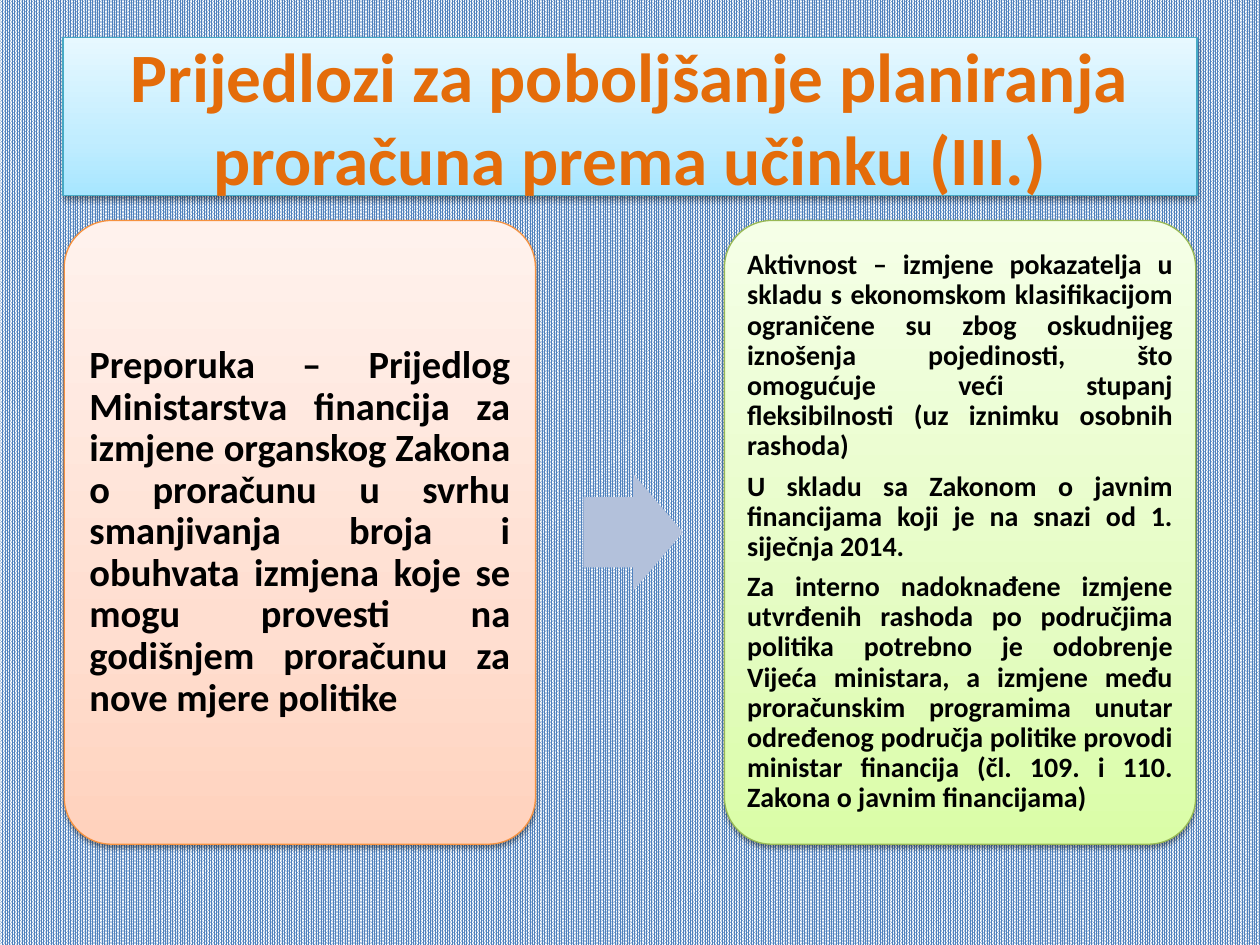
from copy import deepcopy

from lxml.etree import SubElement
from pptx import Presentation
from pptx.dml.color import RGBColor
from pptx.enum.dml import MSO_PATTERN
from pptx.enum.shapes import MSO_SHAPE
from pptx.enum.text import MSO_ANCHOR, PP_ALIGN
from pptx.oxml.ns import qn
from pptx.util import Inches, Pt

THEME = {
    "font": "Calibri",
    "pattern": ("4F81BD", "FFFFFF"),
    "title": {"stops": ("A7E6FF", "C1EDFF", "E7F8FF"), "line": "46AAC5"},
    "orange": {"stops": ("FFD2BD", "FFDED0", "FFF2ED"), "line": "F69240"},
    "green": {"stops": ("DAFDA7", "E4FCC2", "F5FFE7"), "line": "98B955"},
    "arrow": "B3C1DB",
    "heading": "E46C0A",
    "body": "000000",
    "shadow": "000000",
    "heading_size": 39.6,
    "left_size": 22,
    "right_size": 16,
}


def add_panel(page, kind, left, top, width, height, style):
    panel = page.shapes.add_shape(kind, Inches(left), Inches(top), Inches(width), Inches(height))
    panel.fill.gradient()
    panel.fill.gradient_angle = 90
    stops = panel.fill.gradient_stops
    first = stops[0]._gs
    first.addnext(deepcopy(first))
    for stop, position, color in zip(panel.fill.gradient_stops, (0, 0.35, 1), style["stops"]):
        stop.position = position
        stop.color.rgb = RGBColor.from_string(color)
    panel.line.color.rgb = RGBColor.from_string(style["line"])
    panel.line.width = Pt(0.75)
    panel.shadow.inherit = False
    effects = panel._element.spPr.find(qn("a:effectLst"))
    shadow = SubElement(effects, qn("a:outerShdw"), blurRad=str(Pt(3.1)), dist=str(Pt(1.6)),
                        dir="5400000", rotWithShape="0")
    shade = SubElement(shadow, qn("a:srgbClr"), val=THEME["shadow"])
    SubElement(shade, qn("a:alpha"), val="38000")
    return panel


def write(frame, text, size, color, align, inset=None, line_spacing=None, gap=0):
    frame.word_wrap = True
    frame.vertical_anchor = MSO_ANCHOR.MIDDLE
    if inset is not None:
        frame.margin_left = frame.margin_right = Inches(inset)
        frame.margin_top = frame.margin_bottom = Inches(inset)
    for index, line in enumerate(text.split("\n")):
        para = frame.add_paragraph() if index else frame.paragraphs[0]
        para.alignment = align
        para.line_spacing = line_spacing
        para.space_after = Pt(gap * size)
        span = para.add_run()
        span.text = line
        span.font.name = THEME["font"]
        span.font.size = Pt(size)
        span.font.bold = True
        span.font.color.rgb = RGBColor.from_string(color)


deck = Presentation()
deck.slide_width, deck.slide_height = Inches(10), Inches(7.5)
page = deck.slides.add_slide(deck.slide_layouts[6])

backdrop = page.background.fill
backdrop.patterned()
backdrop.pattern = MSO_PATTERN.PERCENT_90
backdrop.fore_color.rgb, backdrop.back_color.rgb = map(RGBColor.from_string, THEME["pattern"])

title = add_panel(page, MSO_SHAPE.RECTANGLE, 0.5, 0.3, 9, 1.25, THEME["title"])
write(title.text_frame, "Prijedlozi za poboljšanje planiranja proračuna prema učinku (III.)",
      THEME["heading_size"], THEME["heading"], PP_ALIGN.CENTER)

recommendation = (
    "Preporuka – Prijedlog Ministarstva financija za izmjene organskog Zakona o proračunu "
    "u svrhu smanjivanja broja i obuhvata izmjena koje se mogu provesti na godišnjem "
    "proračunu za nove mjere politike"
)
activity = "\n".join((
    "Aktivnost – izmjene pokazatelja u skladu s ekonomskom klasifikacijom ograničene su zbog "
    "oskudnijeg iznošenja pojedinosti, što omogućuje veći stupanj fleksibilnosti "
    "(uz iznimku osobnih rashoda)",
    "U skladu sa Zakonom o javnim financijama koji je na snazi od 1. siječnja 2014.",
    "Za interno nadoknađene izmjene utvrđenih rashoda po područjima politika potrebno je "
    "odobrenje Vijeća ministara, a izmjene među proračunskim programima unutar određenog "
    "područja politike provodi ministar financija (čl. 109. i 110. Zakona o javnim financijama)",
))
cards = (
    (0.51, "orange", recommendation, THEME["left_size"], 0.09),
    (5.75, "green", activity, THEME["right_size"], 0.07),
)
top, width, height, margin = 1.75, 3.74, 4.95, 0.11
for left, style, text, size, inset in cards:
    card = add_panel(page, MSO_SHAPE.ROUNDED_RECTANGLE, left, top, width, height, THEME[style])
    card.adjustments[0] = 0.1
    box = page.shapes.add_textbox(Inches(left + margin), Inches(top + margin),
                                  Inches(width - 2 * margin), Inches(height - 2 * margin))
    write(box.text_frame, text, size, THEME["body"], PP_ALIGN.JUSTIFY,
          inset=inset, line_spacing=0.9, gap=0.35)

arrow = page.shapes.add_shape(MSO_SHAPE.RIGHT_ARROW, Inches(4.63), Inches(3.76),
                              Inches(0.79), Inches(0.93))
arrow.adjustments[0], arrow.adjustments[1] = 0.6, 0.5
arrow.fill.solid()
arrow.fill.fore_color.rgb = RGBColor.from_string(THEME["arrow"])
arrow.line.fill.background()
arrow.shadow.inherit = False

deck.save("out.pptx")
